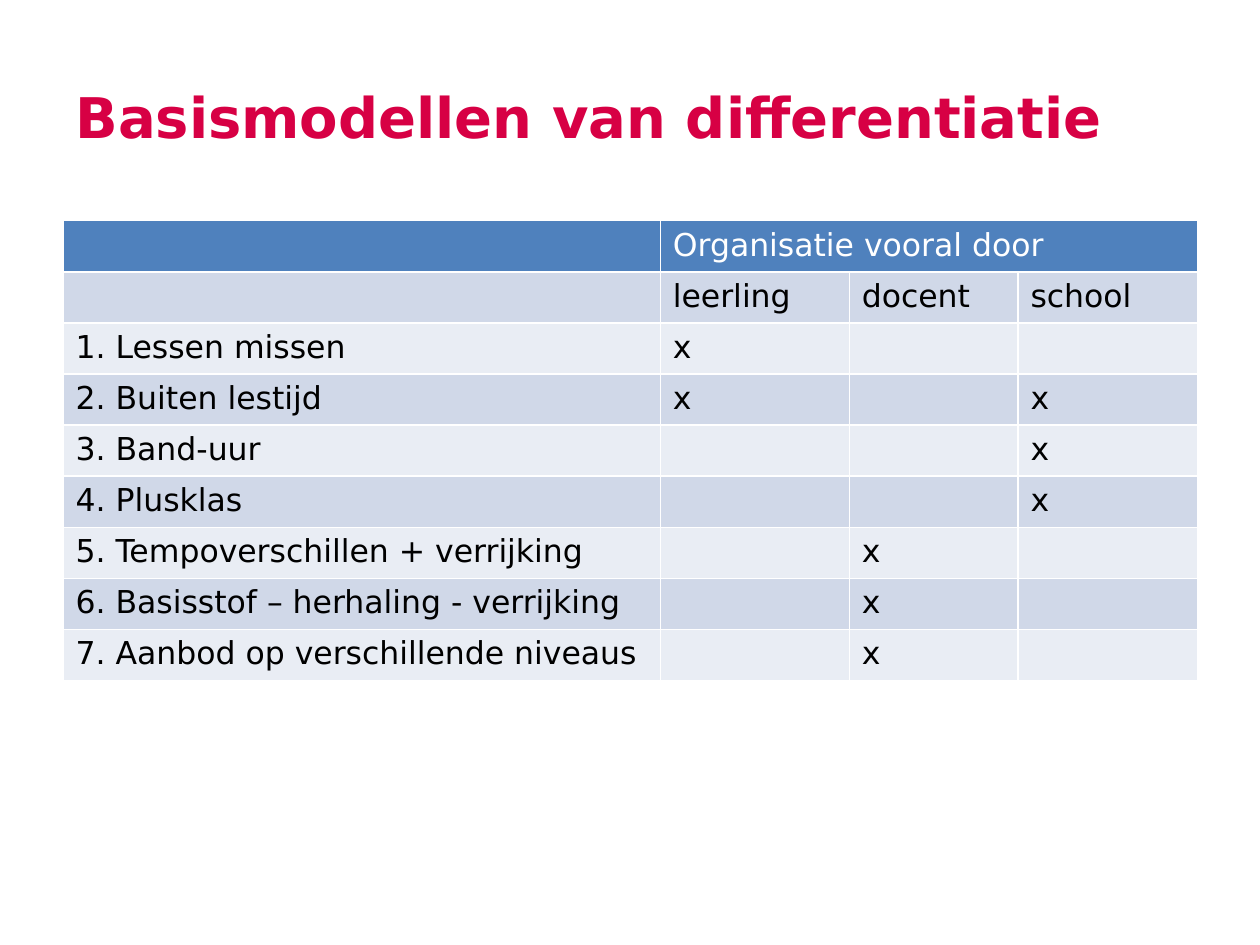
"""Build the slide with the table of basic models of differentiation."""
from pptx import Presentation
from pptx import util as u
from pptx.dml import color
from pptx.enum import text

COLORS = {
    "title": "D70044",
    "header": "4F81BD",
    "band_dark": "D0D8E8",
    "band_light": "E9EDF4",
    "white": "FFFFFF",
    "black": "000000",
}


def write(frame, content, size=18, ink="black", bold=False):
    paragraph = frame.paragraphs[0]
    paragraph.text = content
    font = paragraph.font
    font.name = "DejaVu Sans"
    font.size = u.Pt(size)
    font.bold = bold
    font.color.rgb = color.RGBColor.from_string(COLORS[ink])


organisers = ["leerling", "docent", "school"]
models = [
    ("Lessen missen", ["leerling"]),
    ("Buiten lestijd", ["leerling", "school"]),
    ("Band-uur", ["school"]),
    ("Plusklas", ["school"]),
    ("Tempoverschillen + verrijking", ["docent"]),
    ("Basisstof – herhaling - verrijking", ["docent"]),
    ("Aanbod op verschillende niveaus", ["docent"]),
]
rows = [["", "Organisatie vooral door", "", ""], ["", *organisers]]
for number, (model, organised_by) in enumerate(models, start=1):
    marks = ["x" if organiser in organised_by else "" for organiser in organisers]
    rows.append([f"{number}. {model}", *marks])

prs = Presentation()
prs.slide_width, prs.slide_height = u.Cm(25.4), u.Cm(19.05)
slide = prs.slides.add_slide(prs.slide_layouts[6])

title = slide.shapes.add_textbox(u.Cm(1.27), u.Cm(0.76), u.Cm(22.86), u.Cm(3.18)).text_frame
title.word_wrap = True
title.vertical_anchor = text.MSO_ANCHOR.MIDDLE
write(title, "Basismodellen van differentiatie", size=32, ink="title", bold=True)

widths = [12.04, 3.81, 3.4, 3.63]
row_height = 1.03
overview = slide.shapes.add_table(
    len(rows), len(widths), u.Cm(1.27), u.Cm(4.45), u.Cm(sum(widths)), u.Cm(row_height * len(rows))
).table
for column, width in zip(overview.columns, widths):
    column.width = u.Cm(width)

for r, row in enumerate(rows):
    overview.rows[r].height = u.Cm(row_height)
    band = "header" if r == 0 else "band_dark" if r % 2 else "band_light"
    for c, content in enumerate(row):
        cell = overview.cell(r, c)
        cell.fill.solid()
        cell.fill.fore_color.rgb = color.RGBColor.from_string(COLORS[band])
        write(cell.text_frame, content, ink="white" if r == 0 else "black")
overview.cell(0, 1).merge(overview.cell(0, 3))

prs.save("out.pptx")
